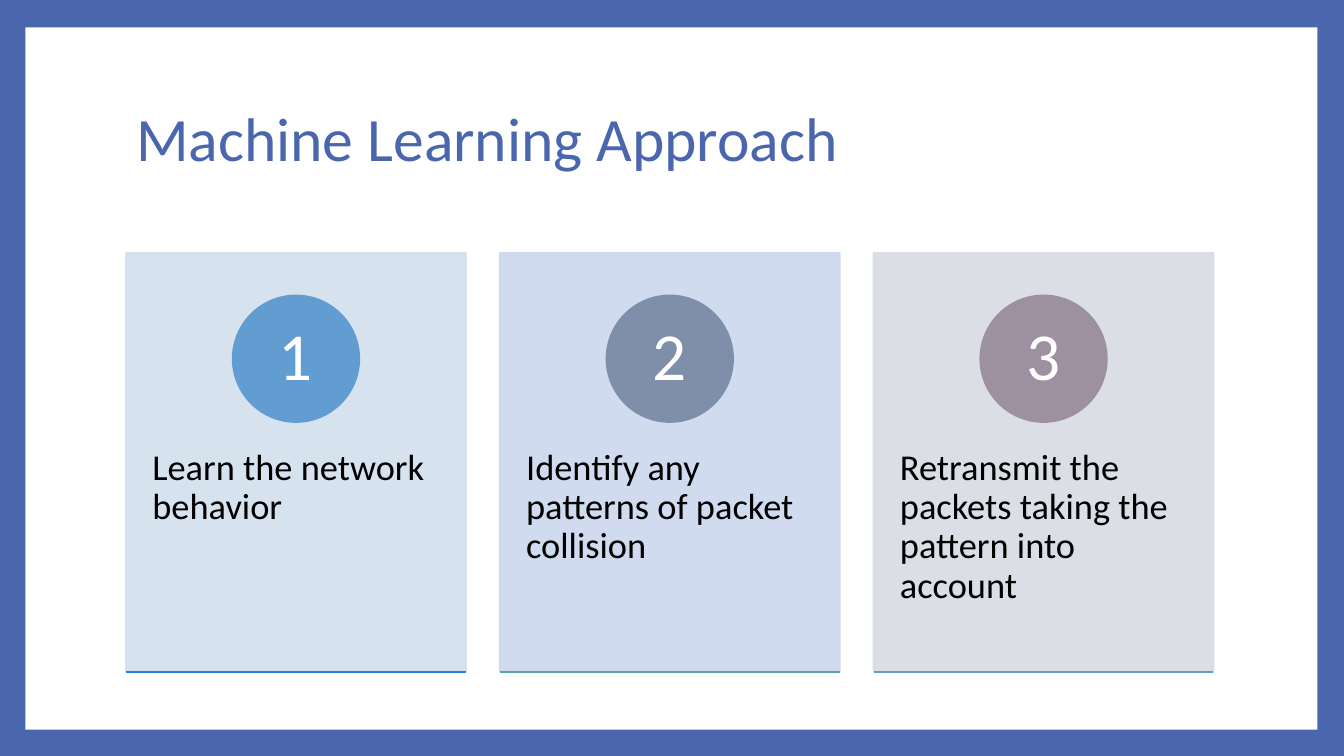
"""Build the Machine Learning Approach slide with three numbered step cards."""
import pptx
import pptx.util
import pptx.dml.color
import pptx.enum.shapes
import pptx.enum.text
import pptx.oxml.ns
from lxml import etree

Cm, Pt = pptx.util.Cm, pptx.util.Pt
SHAPES = pptx.enum.shapes.MSO_SHAPE
ALIGN = pptx.enum.text.PP_ALIGN
ANCHOR = pptx.enum.text.MSO_ANCHOR
qn = pptx.oxml.ns.qn

HEADING = "Machine Learning Approach"
STEPS = [
    ("Learn the network behavior", "D3DFEE", "629DD1", "297FD5"),
    ("Identify any patterns of packet collision", "CDD8EF", "7F8FA9", "5AA2AE"),
    ("Retransmit the packets taking the pattern into account", "D8DBE2", "9D90A0", "629DD1"),
]
BLUE, WHITE, BLACK = "4A66AC", "FFFFFF", "000000"

CARD_LEFT, CARD_TOP, CARD_WIDTH, CARD_HEIGHT = 3.18, 6.38, 8.56, 10.54
CARD_PITCH = 9.42
BADGE_SIZE, BADGE_DROP = 3.18, 1.07
BASELINE = 16.94


def paint(color_format, hex_color):
    color_format.rgb = pptx.dml.color.RGBColor.from_string(hex_color)


def add_panel(slide, kind, box, color, opacity=100, outlined=True):
    panel = slide.shapes.add_shape(kind, *map(Cm, box))
    panel.shadow.inherit = False
    panel.fill.solid()
    paint(panel.fill.fore_color, color)
    if outlined:
        panel.line.width = Pt(1.5)
        paint(panel.line.color, color)
    else:
        panel.line.fill.background()
    if opacity < 100:
        for tint in panel._element.spPr.iter(qn("a:srgbClr")):
            etree.SubElement(tint, qn("a:alpha"), val=str(opacity * 1000))
    return panel


def write(shape, words, size, color, align, anchor, insets):
    frame = shape.text_frame
    frame.word_wrap = True
    frame.vertical_anchor = anchor
    frame.margin_left, frame.margin_top, frame.margin_right, frame.margin_bottom = map(Cm, insets)
    paragraph = frame.paragraphs[0]
    paragraph.text = words
    paragraph.alignment = align
    paragraph.line_spacing = 0.9
    paragraph.font.size = Pt(size)
    paragraph.font.name = "Calibri"
    paint(paragraph.font.color, color)


def add_step(slide, index, words, card_color, badge_color, rule_color):
    left = CARD_LEFT + index * CARD_PITCH
    card = add_panel(slide, SHAPES.RECTANGLE,
                     (left, CARD_TOP, CARD_WIDTH, CARD_HEIGHT), card_color, opacity=90)
    write(card, words, 26, BLACK, ALIGN.LEFT, ANCHOR.TOP, (0.66, 4.93, 0.66, 0.91))

    badge_left = left + (CARD_WIDTH - BADGE_SIZE) / 2
    badge = add_panel(slide, SHAPES.OVAL,
                      (badge_left, CARD_TOP + BADGE_DROP, BADGE_SIZE, BADGE_SIZE), badge_color)
    write(badge, str(index + 1), 48, WHITE, ALIGN.CENTER, ANCHOR.MIDDLE, (0, 0, 0, 0))

    rule = slide.shapes.add_connector(
        pptx.enum.shapes.MSO_CONNECTOR.STRAIGHT,
        Cm(left), Cm(BASELINE), Cm(left + CARD_WIDTH), Cm(BASELINE))
    rule.line.width = Pt(1.5)
    paint(rule.line.color, rule_color)
    etree.SubElement(rule._element.spPr, qn("a:effectLst"))


def main():
    deck = pptx.Presentation()
    deck.slide_width, deck.slide_height = Cm(33.87), Cm(19.05)
    slide = deck.slides.add_slide(deck.slide_layouts[6])
    slide.background.fill.solid()
    paint(slide.background.fill.fore_color, BLUE)
    add_panel(slide, SHAPES.RECTANGLE, (0.64, 0.69, 32.56, 17.7), WHITE, outlined=False)

    heading = slide.shapes.add_textbox(Cm(CARD_LEFT), Cm(1.7), Cm(27.43), Cm(3.76))
    write(heading, HEADING, 44, BLUE, ALIGN.LEFT, ANCHOR.MIDDLE, (0.25, 0.13, 0.25, 0.13))

    for index, step in enumerate(STEPS):
        add_step(slide, index, *step)
    deck.save("out.pptx")


if __name__ == "__main__":
    main()
